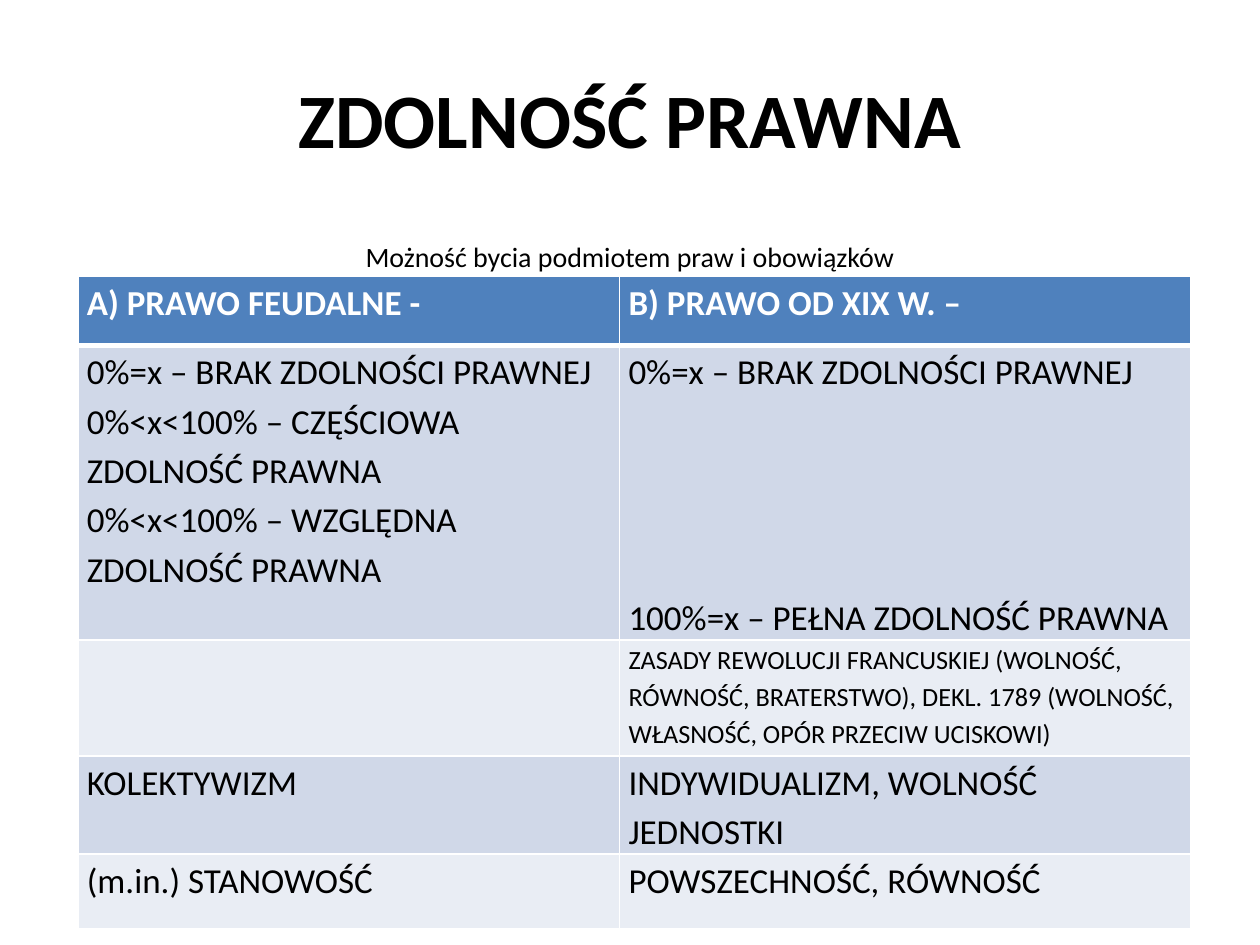
from lxml import etree
from pptx import Presentation
from pptx import util as u
from pptx.dml.color import RGBColor
from pptx.enum import text as t
from pptx.oxml.ns import qn

BLACK, WHITE = "000000", "FFFFFF"
HEADER, DARK_BAND, LIGHT_BAND = "4F81BD", "D0D8E8", "E9EDF4"


def write(paragraph, words, size=20, color=BLACK, bold=False,
          align=t.PP_ALIGN.LEFT, line_spacing=1.0, before=0):
    paragraph.alignment = align
    paragraph.line_spacing = line_spacing
    paragraph.space_before = u.Pt(before)
    run = paragraph.add_run()
    run.text = words
    run.font.name = "Calibri"
    run.font.size = u.Pt(size)
    run.font.bold = bold
    run.font.color.rgb = RGBColor.from_string(color)


def style_cell(cell, fill, bottom_width):
    """Set margins, white borders and fill; borders must precede the fill in the XML."""
    cell.margin_left = cell.margin_right = u.Cm(0.18)
    cell.margin_top = cell.margin_bottom = 0
    properties = cell._tc.get_or_add_tcPr()
    for side, width in (("L", 1), ("R", 1), ("T", 1), ("B", bottom_width)):
        border = etree.SubElement(properties, qn(f"a:ln{side}"), w=str(u.Pt(width)))
        solid = etree.SubElement(border, qn("a:solidFill"))
        etree.SubElement(solid, qn("a:srgbClr"), val=WHITE)
    cell.fill.solid()
    cell.fill.fore_color.rgb = RGBColor.from_string(fill)


prs = Presentation()
prs.slide_width, prs.slide_height = u.Cm(25.4), u.Cm(19.05)
slide = prs.slides.add_slide(prs.slide_layouts[6])

headings = [
    ("ZDOLNOŚĆ PRAWNA", 0.79, 3.18, 44, True, t.MSO_ANCHOR.MIDDLE),
    ("Możność bycia podmiotem praw i obowiązków", 4.7, 0.86, 16, False, t.MSO_ANCHOR.TOP),
]
for words, top, height, size, bold, anchor in headings:
    frame = slide.shapes.add_textbox(u.Cm(1.27), u.Cm(top), u.Cm(22.86), u.Cm(height)).text_frame
    frame.word_wrap = True
    frame.vertical_anchor = anchor
    write(frame.paragraphs[0], words, size=size, bold=bold, align=t.PP_ALIGN.CENTER)

# Each row: height in cm, text size, feudal law, law since the 19th century
comparison = [
    (1.4, 20, ["A) PRAWO FEUDALNE -"], ["B) PRAWO OD XIX W. –"]),
    (5.94, 20,
     ["0%=x – BRAK ZDOLNOŚCI PRAWNEJ",
      "0%<x<100% – CZĘŚCIOWA ZDOLNOŚĆ PRAWNA",
      "0%<x<100% – WZGLĘDNA ZDOLNOŚĆ PRAWNA"],
     ["0%=x – BRAK ZDOLNOŚCI PRAWNEJ", "100%=x – PEŁNA ZDOLNOŚĆ PRAWNA"]),
    (2.34, 15, [],
     ["ZASADY REWOLUCJI FRANCUSKIEJ (WOLNOŚĆ, RÓWNOŚĆ, BRATERSTWO), "
      "DEKL. 1789 (WOLNOŚĆ, WŁASNOŚĆ, OPÓR PRZECIW UCISKOWI)"]),
    (1.98, 20, ["KOLEKTYWIZM"], ["INDYWIDUALIZM, WOLNOŚĆ JEDNOSTKI"]),
    (1.5, 20, ["(m.in.) STANOWOŚĆ"], ["POWSZECHNOŚĆ, RÓWNOŚĆ"]),
]
column_widths = [10.92, 11.51]
full_capacity_gap = 112.4  # pt, lowers the last line to the foot of its cell

table = slide.shapes.add_table(
    len(comparison), 2, u.Cm(1.57), u.Cm(5.56), u.Cm(sum(column_widths)),
    u.Cm(sum(row[0] for row in comparison))).table
for column, width in zip(table.columns, column_widths):
    column.width = u.Cm(width)

for r, (height, size, *eras) in enumerate(comparison):
    table.rows[r].height = u.Cm(height)
    is_header = r == 0
    fill = HEADER if is_header else DARK_BAND if r % 2 else LIGHT_BAND
    for c, statements in enumerate(eras):
        cell = table.cell(r, c)
        style_cell(cell, fill, bottom_width=3 if is_header else 1)
        frame = cell.text_frame
        for i, statement in enumerate(statements):
            paragraph = frame.add_paragraph() if i else frame.paragraphs[0]
            write(paragraph, statement, size=size, bold=is_header,
                  color=WHITE if is_header else BLACK, line_spacing=1.15,
                  before=full_capacity_gap if statement.startswith("100%") else 0)

prs.save("out.pptx")
